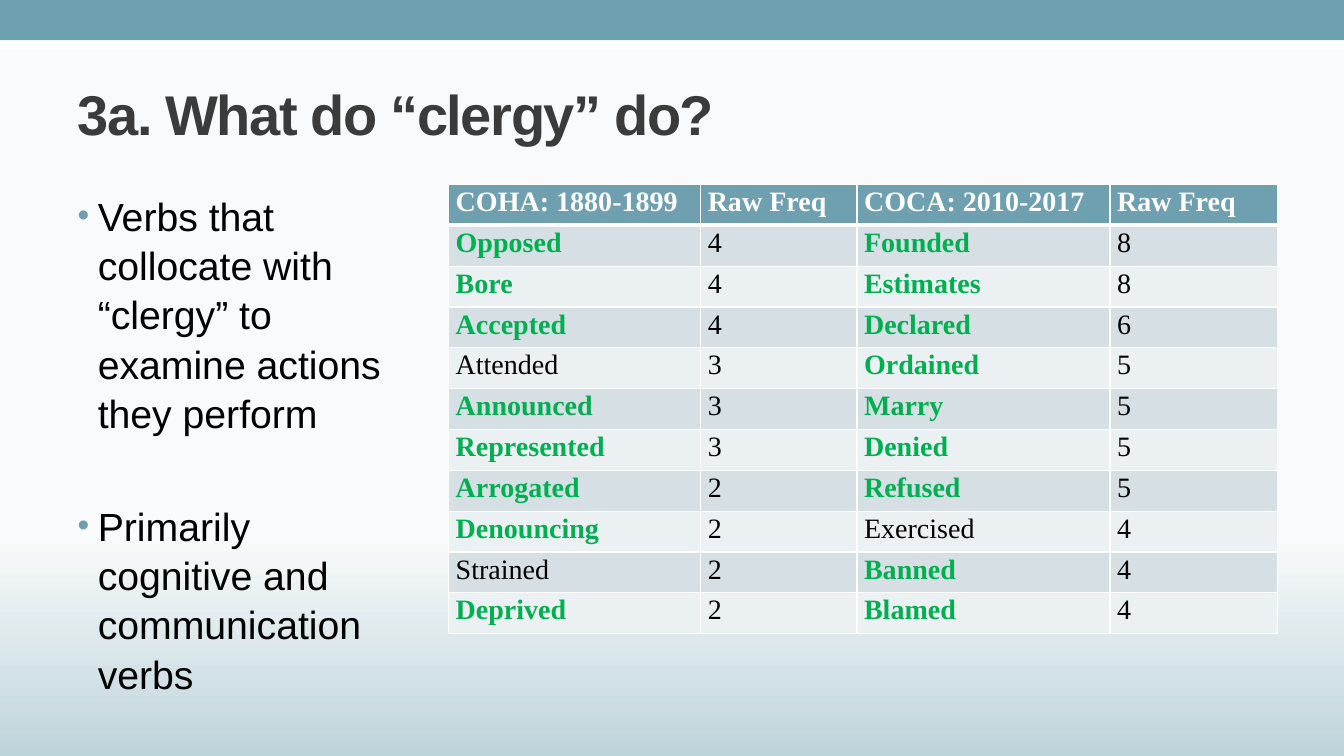
from dataclasses import dataclass

from lxml.etree import SubElement
from pptx import Presentation
from pptx.dml.color import RGBColor
from pptx.enum.shapes import MSO_SHAPE
from pptx.enum.text import MSO_ANCHOR, MSO_AUTO_SIZE, PP_ALIGN
from pptx.oxml.ns import qn
from pptx.util import Inches, Pt

# Content
TITLE = "3a. What do “clergy” do?"
BULLETS = [
    "Verbs that collocate with “clergy” to examine actions they perform",
    "Primarily cognitive and communication verbs",
]
HEADER = ("COHA: 1880-1899", "Raw Freq", "COCA: 2010-2017", "Raw Freq")
VERBS = [
    ("Opposed", 4, "Founded", 8),
    ("Bore", 4, "Estimates", 8),
    ("Accepted", 4, "Declared", 6),
    ("Attended", 3, "Ordained", 5),
    ("Announced", 3, "Marry", 5),
    ("Represented", 3, "Denied", 5),
    ("Arrogated", 2, "Refused", 5),
    ("Denouncing", 2, "Exercised", 4),
    ("Strained", 2, "Banned", 4),
    ("Deprived", 2, "Blamed", 4),
]
PLAIN_VERBS = {"Attended", "Strained", "Exercised"}
COL_WIDTHS = (2.5, 1.55, 2.51, 1.66)
TABLE_HEIGHT = 4.46


@dataclass(frozen=True)
class Theme:
    sans: str = "Arial"
    serif: str = "Times New Roman"
    accent: str = "6EA0B0"
    white: str = "FFFFFF"
    black: str = "000000"
    title: str = "3B3B3B"
    highlight: str = "00B050"
    bands: tuple = ("D5DFE4", "EBF0F2")
    bg_top: str = "F8FAFB"
    bg_bottom: str = "BED4DB"
    title_size: int = 40
    body_size: int = 28
    table_size: int = 20


T = Theme()


def rgb(color):
    return RGBColor.from_string(color)


def place(sp, left, top, width, height):
    sp.left, sp.top = Inches(left), Inches(top)
    sp.width, sp.height = Inches(width), Inches(height)


def add_run(p, text, font, size, color, bold=False):
    r = p.add_run()
    r.text = text
    r.font.name, r.font.size, r.font.bold = font, Pt(size), bold
    r.font.color.rgb = rgb(color)
    return r


def add_bullet(p):
    pPr = p._p.get_or_add_pPr()
    pPr.set("marL", str(Inches(0.2)))
    pPr.set("indent", str(Inches(-0.2)))
    SubElement(SubElement(pPr, qn("a:buClr")), qn("a:srgbClr"), val=T.accent)
    SubElement(pPr, qn("a:buSzPct"), val="85000")
    SubElement(pPr, qn("a:buFont"), typeface=T.sans)
    SubElement(pPr, qn("a:buChar"), char="•")


def add_borders(cell, top, bottom):
    tcPr = cell._tc.get_or_add_tcPr()
    for side, width in (("L", 1), ("R", 1), ("T", top), ("B", bottom)):
        ln = SubElement(tcPr, qn(f"a:ln{side}"), w=str(Pt(width)))
        SubElement(SubElement(ln, qn("a:solidFill")), qn("a:srgbClr"), val=T.white)


def fill_cell(cell, value, row):
    is_header = row == 0
    is_marked = isinstance(value, str) and value not in PLAIN_VERBS
    cell.margin_left = cell.margin_right = Inches(0.07)
    cell.margin_top = cell.margin_bottom = 0
    add_borders(cell, top=3 if row == 1 else 1, bottom=3 if is_header else 1)
    cell.fill.solid()
    cell.fill.fore_color.rgb = rgb(T.accent if is_header else T.bands[(row - 1) % 2])
    color = T.white if is_header else T.highlight if is_marked else T.black
    p = cell.text_frame.paragraphs[0]
    p.alignment, p.line_spacing = PP_ALIGN.JUSTIFY, 1.07
    add_run(p, str(value), T.serif, T.table_size, color, bold=is_marked)


def main():
    prs = Presentation()
    prs.slide_width, prs.slide_height = Inches(13.33), Inches(7.5)
    s = prs.slides.add_slide(prs.slide_layouts[1])

    # Background
    fill = s.background.fill
    fill.gradient()
    fill.gradient_angle = 270
    stops = ((0.71, T.bg_top), (1.0, T.bg_bottom))
    for stop, (position, color) in zip(fill.gradient_stops, stops):
        stop.position = position
        stop.color.rgb = rgb(color)

    # Top bands
    for top, height, color in ((0.24, 0.25, T.white), (0, 0.4, T.accent)):
        band = s.shapes.add_shape(MSO_SHAPE.RECTANGLE, 0, Inches(top),
                                  prs.slide_width, Inches(height))
        band.shadow.inherit = False
        band.fill.solid()
        band.fill.fore_color.rgb = rgb(color)
        band.line.fill.background()

    # Title
    title = s.shapes.title
    place(title, 0.67, 0.58, 12, 1.08)
    tf = title.text_frame
    tf.vertical_anchor, tf.auto_size = MSO_ANCHOR.MIDDLE, MSO_AUTO_SIZE.NONE
    p = tf.paragraphs[0]
    p.alignment = PP_ALIGN.LEFT
    r = add_run(p, TITLE, T.sans, T.title_size, T.title, bold=True)
    r.font._element.set("spc", "-100")

    # Bullets
    body = s.placeholders[1]
    place(body, 0.67, 1.83, 3.41, 5.16)
    tf = body.text_frame
    tf.vertical_anchor, tf.auto_size = MSO_ANCHOR.TOP, MSO_AUTO_SIZE.NONE
    for i, text in enumerate(BULLETS):
        p = tf.add_paragraph() if i else tf.paragraphs[0]
        p.line_spacing, p.space_before = 1.05, Pt(45 if i else 0)
        add_bullet(p)
        add_run(p, text, T.sans, T.body_size, T.black)

    # Verb table
    rows = [HEADER, *VERBS]
    table = s.shapes.add_table(len(rows), len(HEADER), Inches(4.45), Inches(1.83),
                               Inches(sum(COL_WIDTHS)), Inches(TABLE_HEIGHT)).table
    for col, width in zip(table.columns, COL_WIDTHS):
        col.width = Inches(width)
    for i, values in enumerate(rows):
        for j, value in enumerate(values):
            fill_cell(table.cell(i, j), value, i)

    prs.save("out.pptx")


if __name__ == "__main__":
    main()
